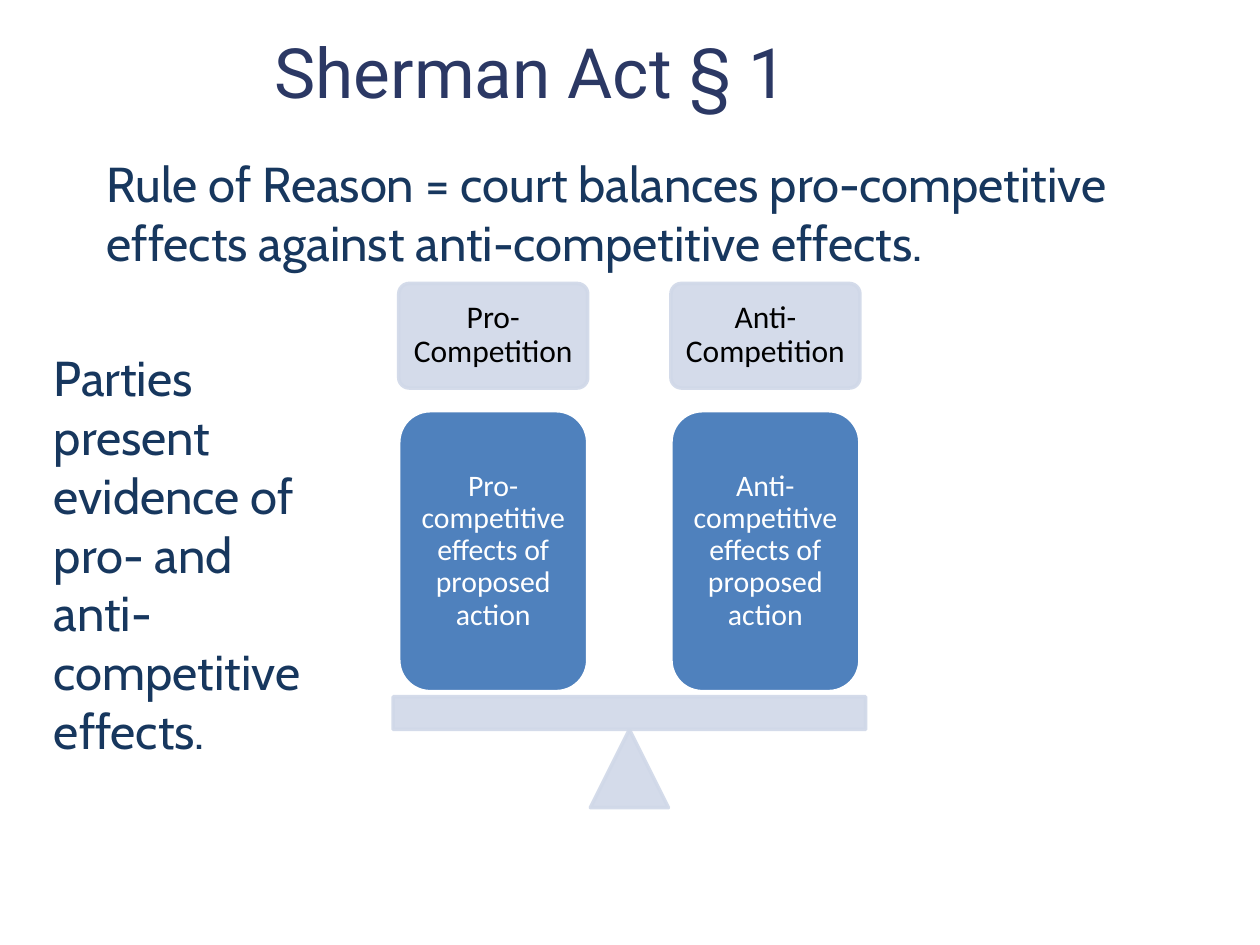
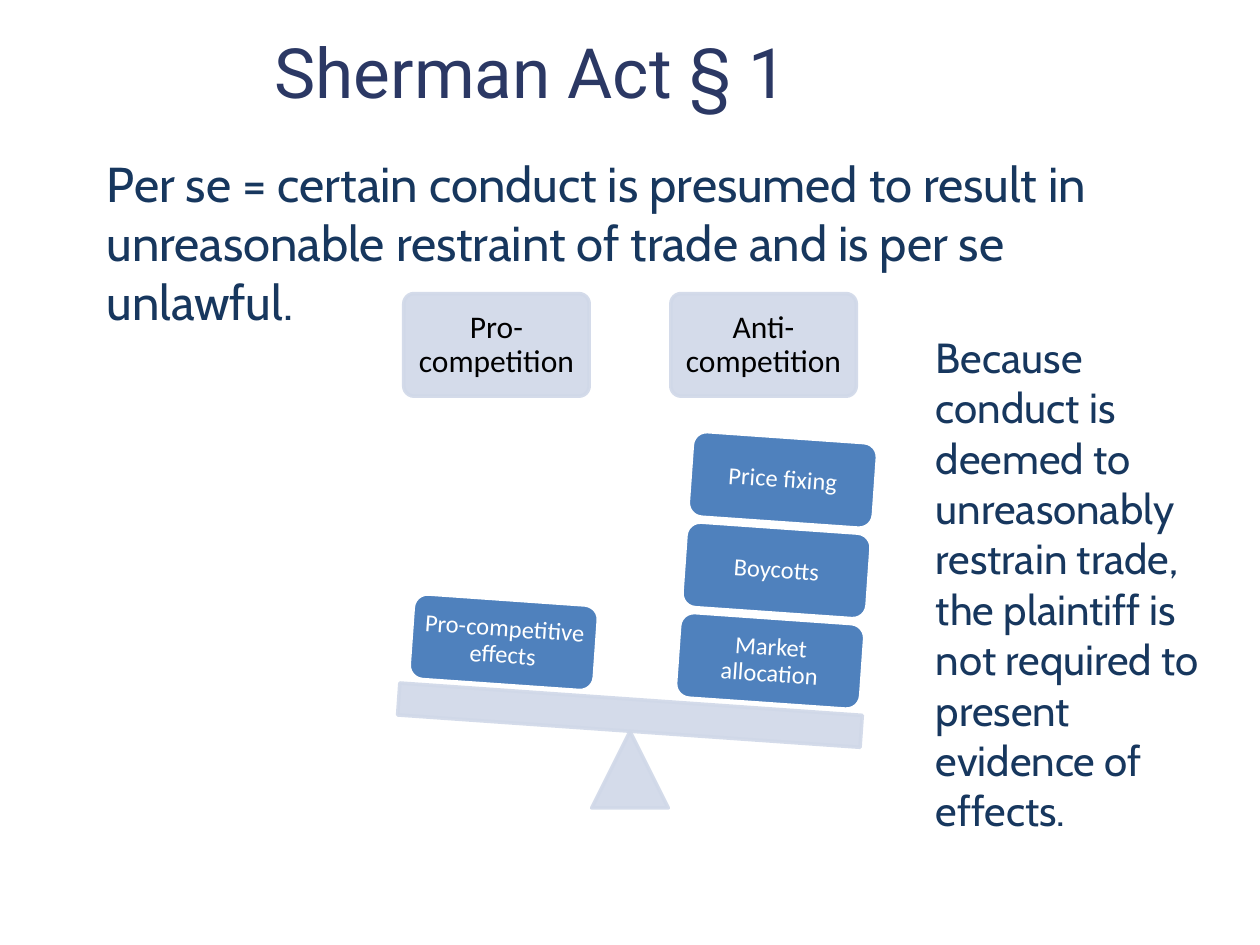
import math
from dataclasses import dataclass

import pptx
import pptx.dml.color
import pptx.enum.shapes
import pptx.enum.text
import pptx.oxml
import pptx.oxml.ns
import pptx.util

Inches = pptx.util.Inches
Pt = pptx.util.Pt
Shape = pptx.enum.shapes.MSO_SHAPE
Align = pptx.enum.text.PP_ALIGN
Anchor = pptx.enum.text.MSO_ANCHOR
Fit = pptx.enum.text.MSO_AUTO_SIZE


@dataclass(frozen=True)
class Theme:
    navy: str = "2B3864"
    ink: str = "17375E"
    pale: str = "D0D8E8"
    blue: str = "4F81BD"
    white: str = "FFFFFF"
    black: str = "000000"
    title_font: str = "Roboto"
    body_font: str = "Cabin"
    label_font: str = "Calibri"
    title_size: float = 39.6
    body_size: int = 28
    side_size: int = 24
    head_size: int = 18
    line: int = 2
    alpha: int = 90


THEME = Theme()
TITLE_BOX = (2.08, 0.25, 7.5, 0.62)
RULE_BOX = (0.75, 1.17, 8.67, 1.04)
SCALE_WIDTH = 3.75  # width at which the scale's parts have their base size


def rgb(code):
    return pptx.dml.color.RGBColor.from_string(code)


def write(frame, text, *, size, font, color, align=Align.LEFT,
          anchor=Anchor.TOP, inset=None, spacing=None, fit=Fit.NONE):
    frame.word_wrap = True
    frame.auto_size = fit
    frame.vertical_anchor = anchor
    if inset is not None:
        frame.margin_left = frame.margin_right = Inches(inset)
        frame.margin_top = frame.margin_bottom = Inches(inset)
    para = frame.paragraphs[0]
    para.alignment = align
    if spacing:
        para.line_spacing = spacing
    run = para.add_run()
    run.text = text
    run.font.size = Pt(size)
    run.font.name = font
    run.font.color.rgb = rgb(color)


def add_title(slide, text):
    title = slide.shapes.title
    title.left, title.top, title.width, title.height = map(Inches, TITLE_BOX)
    write(title.text_frame, text, size=THEME.title_size, font=THEME.title_font,
          color=THEME.navy, anchor=Anchor.MIDDLE)


def add_body(slide, text, box, size=THEME.body_size):
    area = slide.shapes.add_textbox(*map(Inches, box))
    write(area.text_frame, text, size=size, font=THEME.body_font,
          color=THEME.ink, fit=Fit.SHAPE_TO_FIT_TEXT)


def fade(shape):
    """Make the fill and line slightly see-through."""
    for color in shape._element.spPr.iter(pptx.oxml.ns.qn("a:srgbClr")):
        alpha = pptx.oxml.parse_xml(
            f'<a:alpha {pptx.oxml.ns.nsdecls("a")} val="{THEME.alpha * 1000}"/>')
        color.append(alpha)


def add_part(slide, kind, mid, size, *, fill, line, turn=0, round=None):
    """Add a shape centred on mid."""
    (x, y), (wide, high) = mid, size
    part = slide.shapes.add_shape(
        kind, *map(Inches, (x - wide / 2, y - high / 2, wide, high)))
    part.shadow.inherit = False
    part.rotation = turn
    part.fill.solid()
    part.fill.fore_color.rgb = rgb(fill)
    part.line.color.rgb = rgb(line)
    part.line.width = Pt(THEME.line)
    if round is not None:
        part.adjustments[0] = round
    if fill == THEME.pale:
        fade(part)
    return part


def label(part, text, size, color, inset=0.07):
    write(part.text_frame, text, size=size, font=THEME.label_font, color=color,
          align=Align.CENTER, anchor=Anchor.MIDDLE, inset=inset, spacing=0.9)


def add_scale(slide, box, heads, stacks, *, high, size, tilt=0, shift=0,
              inset=0.07):
    """Draw heads, beam and foot in box, with stacked blocks on each arm."""
    left, top, width = box
    unit = width / SCALE_WIDTH
    mid = left + width / 2
    arm, wide, gap = 1.08 * unit, 1.5 * unit, 0.04
    beam = 0.26 * unit
    pivot = top + 3.41 * unit
    pale = dict(fill=THEME.pale, line=THEME.pale)

    for side, text in zip((-1, 1), heads):
        head = add_part(slide, Shape.ROUNDED_RECTANGLE,
                        (mid + side * arm, top + 0.415 * unit),
                        (wide, 0.83 * unit), round=0.1, **pale)
        label(head, text, THEME.head_size, THEME.black)

    add_part(slide, Shape.ISOSCELES_TRIANGLE, (mid, top + 3.85 * unit),
             (0.62 * unit, 0.62 * unit), **pale)
    add_part(slide, Shape.RECTANGLE, (mid, pivot), (width, beam),
             turn=tilt, **pale)

    sin, cos = math.sin(math.radians(tilt)), math.cos(math.radians(tilt))
    for side, stack in zip((-1, 1), stacks):
        along = side * arm + shift
        for level, text in enumerate(stack):
            rise = beam / 2 + gap + high / 2 + level * (high + gap)
            spot = (mid + along * cos + rise * sin,
                    pivot + along * sin - rise * cos)
            block = add_part(slide, Shape.ROUNDED_RECTANGLE, spot, (wide, high),
                             fill=THEME.blue, line=THEME.white, turn=tilt)
            label(block, text, size, THEME.white, inset)


def new_slide(deck, rule):
    slide = deck.slides.add_slide(deck.slide_layouts[5])
    add_title(slide, "Sherman Act § 1")
    add_body(slide, rule, RULE_BOX)
    return slide


def reason_slide(deck):
    slide = new_slide(deck, "Rule of Reason = court balances pro-competitive "
                            "effects against anti-competitive effects.")
    add_scale(slide, (3.12, 2.25, 3.75),
              ("Pro-Competition", "Anti-Competition"),
              (["Pro-competitive effects of proposed action"],
               ["Anti-competitive effects of proposed action"]),
              high=2.23, size=17)
    add_body(slide, "Parties present evidence of pro- and anti-competitive "
                    "effects.", (0.33, 2.71, 2.42, 2.46))


def per_se_slide(deck):
    slide = new_slide(deck, "Per se = certain conduct is presumed to result in "
                            "unreasonable restraint of trade and is per se "
                            "unlawful.")
    add_scale(slide, (3.16, 2.33, 3.68),
              ("Pro-competition", "Anti-competition"),
              (["Pro-competitive effects"],
               ["Market allocation", "Boycotts", "Price fixing"]),
              high=0.68, size=14, tilt=4, shift=0.02, inset=0.06)
    add_body(slide, "Because conduct is deemed to unreasonably restrain trade, "
                    "the plaintiff is not required to present evidence of "
                    "effects.", (7.33, 2.58, 2.33, 3.33), THEME.side_size)


def main():
    deck = pptx.Presentation()
    deck.slide_width, deck.slide_height = Inches(10), Inches(7.5)
    reason_slide(deck)
    per_se_slide(deck)
    deck.save("out.pptx")


if __name__ == "__main__":
    main()
